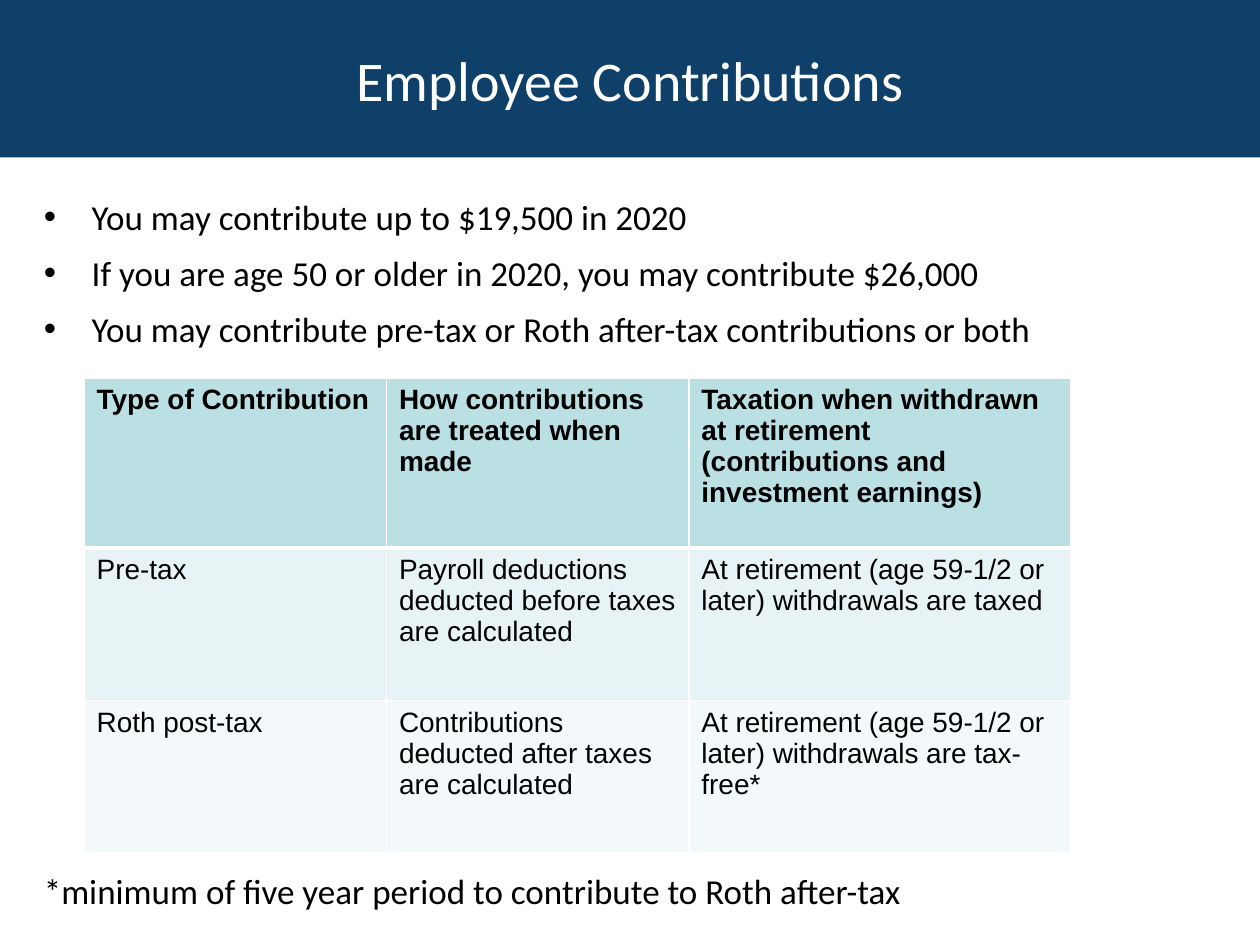
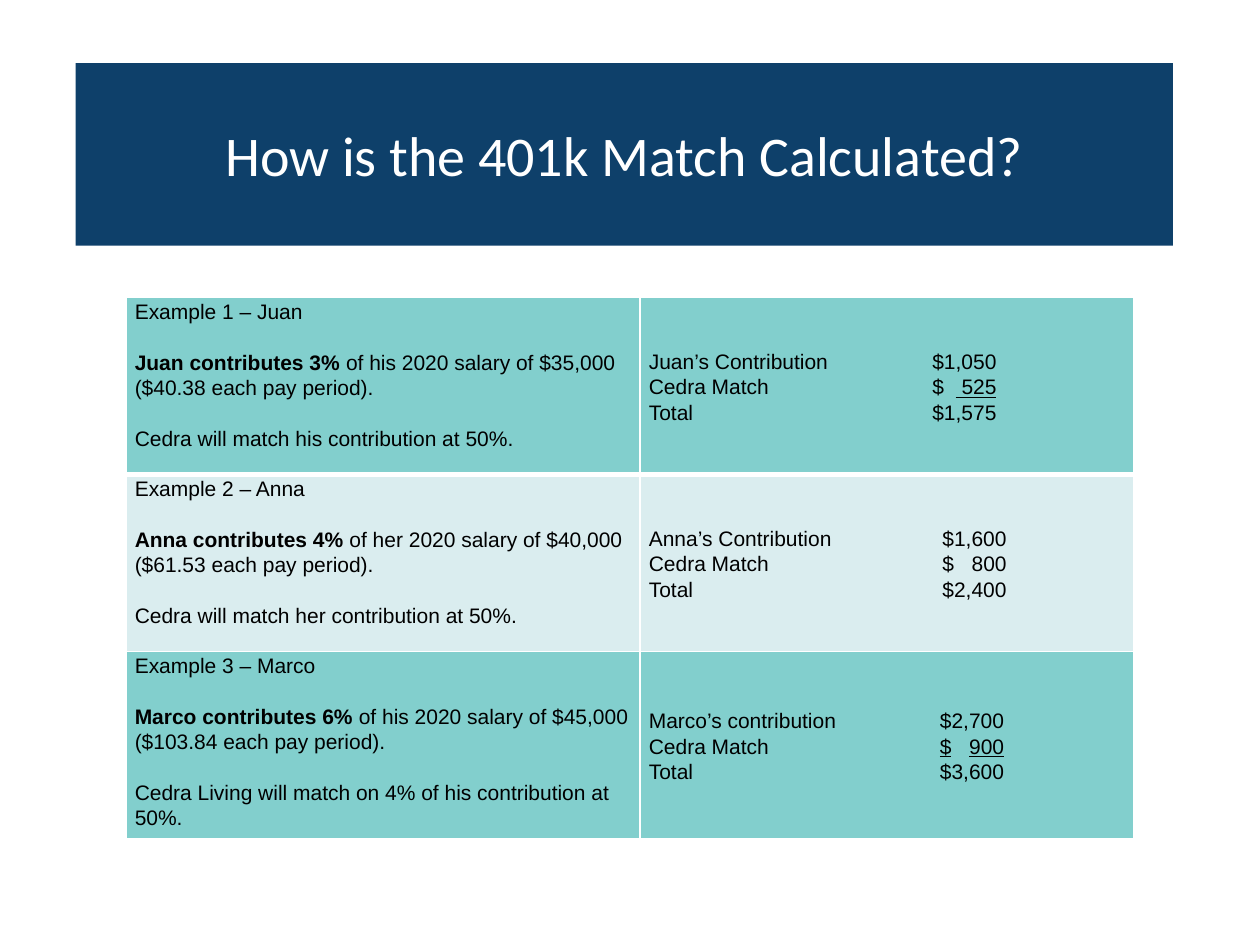
from lxml import etree
from pptx import Presentation
from pptx.dml.color import RGBColor
from pptx.enum.shapes import MSO_SHAPE
from pptx.enum.text import MSO_ANCHOR, PP_ALIGN
from pptx.oxml.ns import qn
from pptx.util import Inches, Pt

RECTANGLE = MSO_SHAPE.RECTANGLE
TOP, MIDDLE = MSO_ANCHOR.TOP, MSO_ANCHOR.MIDDLE
CENTER = PP_ALIGN.CENTER

COLORS = {
    "navy": "0E406A",
    "white": "FFFFFF",
    "black": "000000",
    "header": "BBE0E3",
    "pre_tax": "E7F3F4",
    "roth": "F3F9FA",
    "teal": "82CFCD",
    "pale": "DAEDEF",
}
HEADING_FONT, TABLE_FONT = "Calibri", "Arial"
GRID = Inches(0.25)
COLUMNS, ROWS = 40, 30
BLANK_LINE = Pt(14.6)

LIMITS = [
    "You may contribute up to $19,500 in 2020",
    "If you are age 50 or older in 2020, you may contribute $26,000",
    "You may contribute pre-tax or Roth after-tax contributions or both",
]
FOOTNOTE = "*minimum of five year period to contribute to Roth after-tax"
CONTRIBUTION_TYPES = [
    ("Type of Contribution", "How contributions are treated when made",
     "Taxation when withdrawn at retirement (contributions and investment earnings)"),
    ("Pre-tax", "Payroll deductions deducted before taxes are calculated",
     "At retirement (age 59-1/2 or later) withdrawals are taxed"),
    ("Roth post-tax", "Contributions deducted after taxes are calculated",
     "At retirement (age 59-1/2 or later) withdrawals are tax-free*"),
]
EXAMPLES = [
    {
        "heading": "Example 1 – Juan",
        "share": "Juan contributes 3% ",
        "salary": "of his 2020 salary of $35,000 ($40.38 each pay period).",
        "match": "Cedra will match his contribution at 50%.",
        "label": "Juan’s Contribution",
        "amounts": ("$1,050", ("$\t", " 525"), "$1,575"),
        "dollar_tab": 2.25,
    },
    {
        "heading": "Example 2 – Anna",
        "share": "Anna contributes 4% ",
        "salary": "of her 2020 salary of $40,000 ($61.53 each pay period).",
        "match": "Cedra will match her contribution at 50%.",
        "label": "Anna’s Contribution",
        "amounts": ("$1,600", ("$\t800", ""), "$2,400"),
        "dollar_tab": 2.33,
    },
    {
        "heading": "Example 3 – Marco",
        "share": "Marco contributes 6% ",
        "salary": "of his 2020 salary of $45,000 ($103.84 each pay period).",
        "match": "Cedra Living will match on 4% of his contribution at 50%.",
        "label": "Marco’s contribution",
        "amounts": ("$2,700", ("", "$\t900"), "$3,600"),
        "dollar_tab": 2.31,
    },
]


def color(name):
    return RGBColor.from_string(COLORS[name])


def cells(count):
    return round(count * GRID)


def area(*grid_box):
    return [cells(count) for count in grid_box]


def set_font(paragraph, face, size, shade="black", bold=None):
    paragraph.font.name = face
    paragraph.font.size = Pt(size)
    paragraph.font.color.rgb = color(shade)
    paragraph.font.bold = bold


def add_paragraph(frame, first):
    return frame.paragraphs[0] if first else frame.add_paragraph()


def add_title_band(slide, title, *grid_box):
    band = slide.shapes.add_shape(RECTANGLE, *area(*grid_box))
    band.shadow.inherit = False
    band.fill.solid()
    band.fill.fore_color.rgb = color("navy")
    band.line.fill.background()
    band.text_frame.word_wrap = True
    band.text_frame.vertical_anchor = MIDDLE
    heading = band.text_frame.paragraphs[0]
    heading.text = title
    heading.alignment = CENTER
    set_font(heading, HEADING_FONT, 32, "white")


def add_bullet(paragraph):
    properties = paragraph._p.get_or_add_pPr()
    properties.set("marL", str(Inches(0.38)))
    properties.set("indent", str(-Inches(0.38)))
    etree.SubElement(properties, qn("a:buFont"), typeface="Arial")
    etree.SubElement(properties, qn("a:buChar"), char="•")


def add_body(slide, lines, grid_box, bulleted):
    frame = slide.shapes.add_textbox(*area(*grid_box)).text_frame
    frame.word_wrap = True
    for index, line in enumerate(lines):
        paragraph = add_paragraph(frame, index == 0)
        paragraph.text = line
        paragraph.space_after = Pt(8)
        set_font(paragraph, HEADING_FONT, 20)
        if bulleted:
            add_bullet(paragraph)


def set_borders(cell, row):
    widths = {"L": 1, "R": 1, "T": 3 if row == 1 else 1, "B": 3 if row == 0 else 1}
    properties = cell._tc.get_or_add_tcPr()
    for side, width in widths.items():
        line = etree.SubElement(properties, qn(f"a:ln{side}"), w=str(Pt(width)))
        fill = etree.SubElement(line, qn("a:solidFill"))
        etree.SubElement(fill, qn("a:srgbClr"), val=COLORS["white"])


def add_grid_table(slide, left, top, widths, heights, row_fills):
    table = slide.shapes.add_table(
        len(heights), len(widths),
        *area(left, top, sum(widths), sum(heights))).table
    table.first_row = table.horz_banding = False
    for column, width in zip(table.columns, widths):
        column.width = cells(width)
    for index, (row, height, fill) in enumerate(zip(table.rows, heights, row_fills)):
        row.height = cells(height)
        for cell in row.cells:
            set_borders(cell, index)
            cell.fill.solid()
            cell.fill.fore_color.rgb = color(fill)
    return table


def start_example_cell(cell, anchor):
    cell.margin_left = cell.margin_right = Inches(0.07)
    cell.margin_top, cell.margin_bottom = Inches(0.01), 0
    cell.vertical_anchor = anchor
    return cell.text_frame


def add_example_line(frame, first):
    paragraph = add_paragraph(frame, first)
    paragraph.line_spacing = 1.07
    set_font(paragraph, TABLE_FONT, 12)
    return paragraph


def add_tabs(paragraph, dollar_tab):
    properties = paragraph._p.get_or_add_pPr()
    stops = etree.Element(qn("a:tabLst"))
    for position, side in ((dollar_tab, "l"), (dollar_tab + 0.51, "r")):
        etree.SubElement(stops, qn("a:tab"), pos=str(Inches(position)), algn=side)
    properties.find(qn("a:defRPr")).addprevious(stops)


def describe_example(cell, example):
    frame = start_example_cell(cell, TOP)
    add_example_line(frame, True).add_run().text = example["heading"]
    contribution = add_example_line(frame, False)
    contribution.space_before = BLANK_LINE
    share = contribution.add_run()
    share.text = example["share"]
    share.font.bold = True
    contribution.add_run().text = example["salary"]
    match = add_example_line(frame, False)
    match.space_before = BLANK_LINE
    match.add_run().text = example["match"]


def sum_example(cell, example):
    frame = start_example_cell(cell, MIDDLE)
    labels = (example["label"], "Cedra Match", "Total")
    for index, (label, amount) in enumerate(zip(labels, example["amounts"])):
        line = add_example_line(frame, index == 0)
        add_tabs(line, example["dollar_tab"])
        plain, underlined = (amount, "") if isinstance(amount, str) else amount
        line.add_run().text = f"{label}\t{plain}"
        if underlined:
            addend = line.add_run()
            addend.text = underlined
            addend.font.underline = True


def build_contributions(slide):
    add_title_band(slide, "Employee Contributions", 0, 0, COLUMNS, 5)
    add_body(slide, LIMITS, (1, 6, 37.3, 5.6), True)
    table = add_grid_table(slide, 2.67, 12, (9.6, 9.6, 12.12), (5.4, 4.84, 4.84),
                           ("header", "pre_tax", "roth"))
    for row, texts in enumerate(CONTRIBUTION_TYPES):
        for column, text in enumerate(texts):
            paragraph = table.cell(row, column).text_frame.paragraphs[0]
            paragraph.text = text
            set_font(paragraph, TABLE_FONT, 16, bold=row == 0)
    add_body(slide, [FOOTNOTE], (1, 27.4, 37.3, 1.8), False)


def build_match(slide):
    add_title_band(slide, "How is the 401k Match Calculated?", 2.4, 2, 34.84, 5.8)
    table = add_grid_table(slide, 4, 9.45, (16.32, 15.68), (5.62,) * len(EXAMPLES),
                           ("teal", "pale", "teal"))
    for row, example in enumerate(EXAMPLES):
        describe_example(table.cell(row, 0), example)
        sum_example(table.cell(row, 1), example)


def main():
    deck = Presentation()
    deck.slide_width, deck.slide_height = area(COLUMNS, ROWS)
    for build in (build_contributions, build_match):
        build(deck.slides.add_slide(deck.slide_layouts[6]))
    deck.save("out.pptx")


if __name__ == "__main__":
    main()
